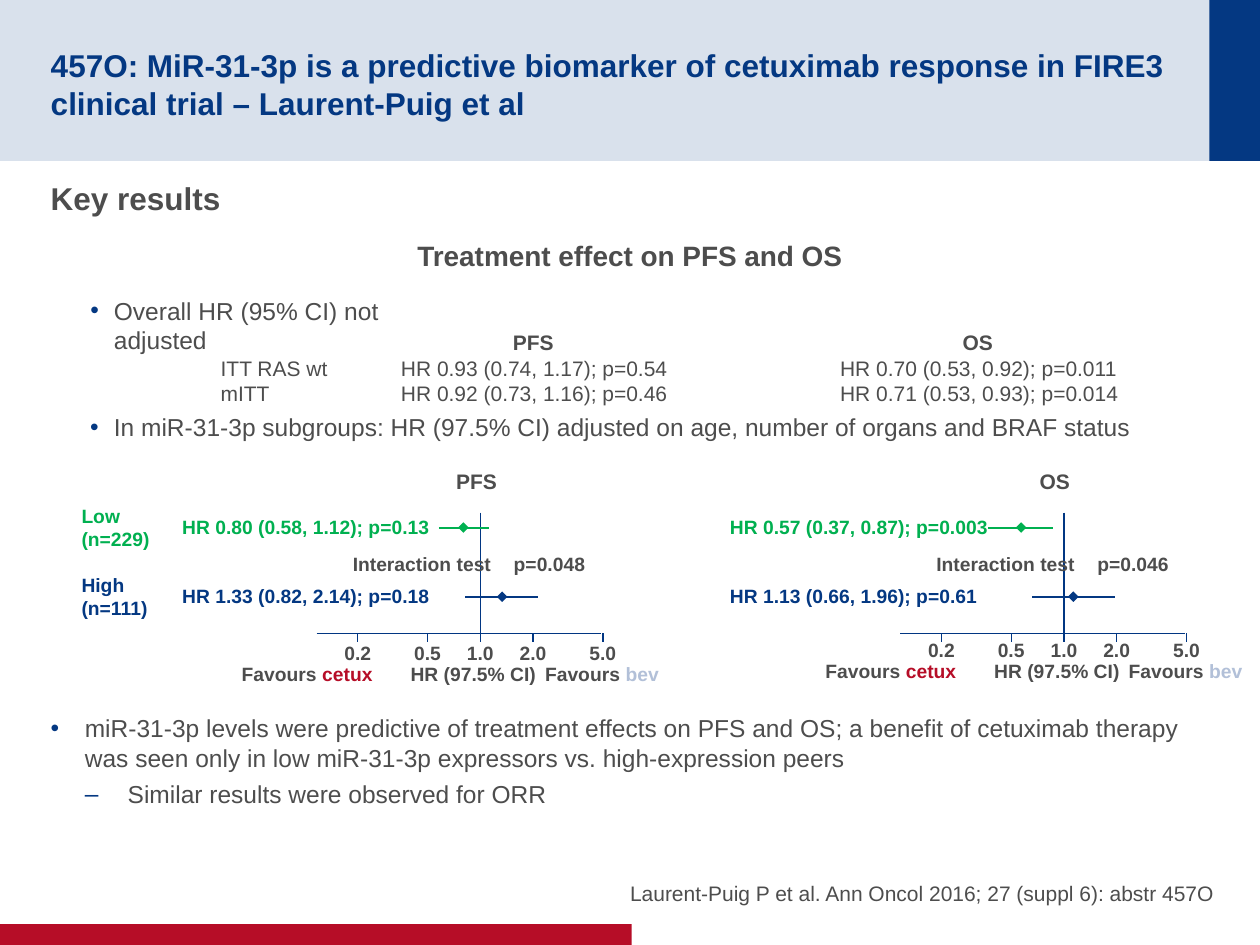
from dataclasses import dataclass
from math import log

from lxml.etree import SubElement
from pptx import Presentation
from pptx.dml.color import RGBColor
from pptx.enum.shapes import MSO_CONNECTOR, MSO_SHAPE
from pptx.enum.text import MSO_ANCHOR, PP_ALIGN
from pptx.oxml.ns import qn
from pptx.util import Pt

COLORS = {
    "navy": "043882", "axis": "013682", "band": "D9E1EC", "red": "B60D27",
    "grey": "4D4D4D", "green": "00B050", "pale": "B2C0D8",
}
FONT = "Arial"
LOG_UNIT = 43.5  # points per natural-log unit on the hazard ratio axis
AXIS_Y = 362
TICKS = (0.2, 0.5, 1.0, 2.0, 5.0)
GROUPS = (("Low", "(n=229)", "green", 301.5), ("High", "(n=111)", "navy", 341))
LEFT, CENTER, RIGHT = PP_ALIGN.LEFT, PP_ALIGN.CENTER, PP_ALIGN.RIGHT


@dataclass
class ForestPlot:
    title: str
    title_width: float
    one_x: float
    estimate_left: float
    scale_top: float
    interaction: str
    estimates: tuple  # (HR, lower, upper, p) for each group


PLOTS = (
    ForestPlot("PFS", 38, 274.5, 97, 363, "p=0.048",
               ((0.80, 0.58, 1.12, "0.13"), (1.33, 0.82, 2.14, "0.18"))),
    ForestPlot("OS", 32, 608, 410, 361, "p=0.046",
               ((0.57, 0.37, 0.87, "0.003"), (1.13, 0.66, 1.96, "0.61"))),
)


def rgb(name):
    return RGBColor.from_string(COLORS[name])


def set_bullet(p, char, margin, indent):
    pPr = p._p.get_or_add_pPr()
    pPr.set("marL", str(Pt(margin)))
    pPr.set("indent", str(Pt(-indent)))
    color = SubElement(pPr, qn("a:buClr"))
    SubElement(color, qn("a:srgbClr")).set("val", COLORS["navy"])
    SubElement(pPr, qn("a:buFont")).set("typeface", FONT)
    SubElement(pPr, qn("a:buChar")).set("char", char)


def write(sp, paragraphs, size=12, color="grey", bold=False, align=LEFT, wrap=False,
          anchor=MSO_ANCHOR.TOP, insets=(7.2, 3.6, 7.2, 3.6), after=0, bullets=()):
    """Fill a shape; a paragraph is a string or a list of (text, color) runs."""
    tf = sp.text_frame
    tf.word_wrap = wrap
    tf.vertical_anchor = anchor
    tf.margin_left, tf.margin_top, tf.margin_right, tf.margin_bottom = map(Pt, insets)
    for i, content in enumerate(paragraphs):
        p = tf.add_paragraph() if i else tf.paragraphs[0]
        p.alignment = align
        p.space_before, p.space_after = Pt(0), Pt(after)
        if bullets:
            set_bullet(p, *bullets[i])
        for text, run_color in [(content, color)] if isinstance(content, str) else content:
            r = p.add_run()
            r.text = text
            r.font.name, r.font.size, r.font.bold = FONT, Pt(size), bold
            r.font.color.rgb = rgb(run_color)


def add_text(slide, box, *paragraphs, **fmt):
    write(slide.shapes.add_textbox(*map(Pt, box)), paragraphs, **fmt)


def add_block(slide, kind, box, color):
    sp = slide.shapes.add_shape(kind, *map(Pt, box))
    sp.shadow.inherit = False
    sp.fill.solid()
    sp.fill.fore_color.rgb = rgb(color)
    sp.line.fill.background()
    return sp


def add_line(slide, x1, y1, x2, y2, color="axis", width=0.75):
    line = slide.shapes.add_connector(MSO_CONNECTOR.STRAIGHT, *map(Pt, (x1, y1, x2, y2)))
    line.line.color.rgb = rgb(color)
    line.line.width = Pt(width)
    SubElement(line._element.spPr, qn("a:effectLst"))


def add_header(slide):
    bands = (((0, 0, 720, 92), "band"), ((691, 0, 29, 92), "navy"),
             ((0, 528, 361, 12), "red"))
    for i, (box, color) in enumerate(bands):
        sp = add_block(slide, MSO_SHAPE.RECTANGLE, box, color)
        slide.shapes._spTree.insert(2 + i, sp._element)  # behind the title
    title = slide.shapes.title
    title.left, title.top, title.width, title.height = map(Pt, (29, 14.5, 649, 63))
    write(title, ["457O: MiR-31-3p is a predictive biomarker of cetuximab response in FIRE3 "
                  "clinical trial – Laurent-Puig et al"],
          size=18, color="navy", bold=True, wrap=True, anchor=MSO_ANCHOR.MIDDLE,
          insets=(0, 3.6, 0, 0))


def add_overall_results(slide):
    add_text(slide, (29, 98.5, 662, 30), "Key results", size=18, bold=True, wrap=True,
             insets=(0, 3.6, 0, 3.6))
    add_text(slide, (229.5, 133, 261, 27), "Treatment effect on PFS and OS",
             size=16, bold=True, align=CENTER)
    for top, width, text in (
            (165.5, 212, "Overall HR (95% CI) not adjusted"),
            (232, 640, "In miR-31-3p subgroups: HR (97.5% CI) adjusted on age, "
                       "number of organs and BRAF status")):
        add_text(slide, (44.5, top, width, 24.5), text, size=14, wrap=True,
                 bullets=[("•", 13.5, 13.5)])
    for left, width, *rows in (
            (119, 76, "ITT RAS wt", "mITT"),
            (222, 171, "HR 0.93 (0.74, 1.17); p=0.54", "HR 0.92 (0.73, 1.16); p=0.46"),
            (473, 179, "HR 0.70 (0.53, 0.92); p=0.011", "HR 0.71 (0.53, 0.93); p=0.014")):
        add_text(slide, (left, 199.5, width, 36), *rows)
    for left, width, text in ((286, 38, "PFS"), (543, 32, "OS")):
        add_text(slide, (left, 184.5, width, 21.5), text, bold=True)


def add_forest_plot(slide, plot):
    def x_of(ratio):
        return plot.one_x + LOG_UNIT * log(ratio)

    def label(offset, top, width, content, align=CENTER):
        add_text(slide, (plot.one_x + offset, top, width, 21), content,
                 size=11, bold=True, align=align)

    add_text(slide, (plot.one_x - 21, 264, plot.title_width, 21.5), plot.title, bold=True)
    add_line(slide, plot.one_x - 93.5, AXIS_Y, plot.one_x + 69, AXIS_Y)
    add_line(slide, plot.one_x, 293, plot.one_x, AXIS_Y)
    for tick in TICKS:
        x = x_of(tick)
        add_line(slide, x, AXIS_Y, x, AXIS_Y + 5)
        label(x - 15 - plot.one_x, plot.scale_top, 30, f"{tick:.1f}")
    caption_top = plot.scale_top + 12
    label(-144, caption_top, 90, [("Favours ", "grey"), ("cetux", "red")])
    label(-47, caption_top, 86, "HR (97.5% CI)")
    label(29.5, caption_top, 80, [("Favours ", "grey"), ("bev", "pale")])
    label(-80, 312, 94, "Interaction test", LEFT)
    label(12, 312, 55, plot.interaction, LEFT)

    for (_, _, color, y), (hr, low, high, p) in zip(GROUPS, plot.estimates):
        text = f"HR {hr:.2f} ({low:.2f}, {high:.2f}); p={p}"
        add_text(slide, (plot.estimate_left, y - 10.5, 156 if len(p) == 4 else 163, 21),
                 text, size=11, bold=True, color=color)
        add_line(slide, x_of(low), y, x_of(high), y, color, 1.25)
        add_block(slide, MSO_SHAPE.DIAMOND, (x_of(hr) - 3, y - 3, 6, 6), color)


def add_conclusions(slide):
    add_text(slide, (29, 404, 662, 68),
             "miR-31-3p levels were predictive of treatment effects on PFS and OS; a benefit of "
             "cetuximab therapy was seen only in low miR-31-3p expressors vs. "
             "high-expression peers",
             "Similar results were observed for ORR",
             size=14, wrap=True, insets=(0, 3.6, 0, 3.6), after=4,
             bullets=[("•", 19.5, 19.5), ("–", 44, 24.5)])
    add_text(slide, (345, 479.5, 349, 38),
             "Laurent-Puig P et al. Ann Oncol 2016; 27 (suppl 6): abstr 457O",
             align=RIGHT, wrap=True, anchor=MSO_ANCHOR.BOTTOM, insets=(0, 0, 0, 0), after=4)


def main():
    prs = Presentation()
    prs.slide_width, prs.slide_height = Pt(720), Pt(540)
    slide = prs.slides.add_slide(prs.slide_layouts[5])
    add_header(slide)
    add_overall_results(slide)
    for name, count, color, y in GROUPS:
        add_text(slide, (39.5, y - 17, 54, 34), name, count, size=11, bold=True, color=color)
    for plot in PLOTS:
        add_forest_plot(slide, plot)
    add_conclusions(slide)
    prs.save("out.pptx")


if __name__ == "__main__":
    main()
